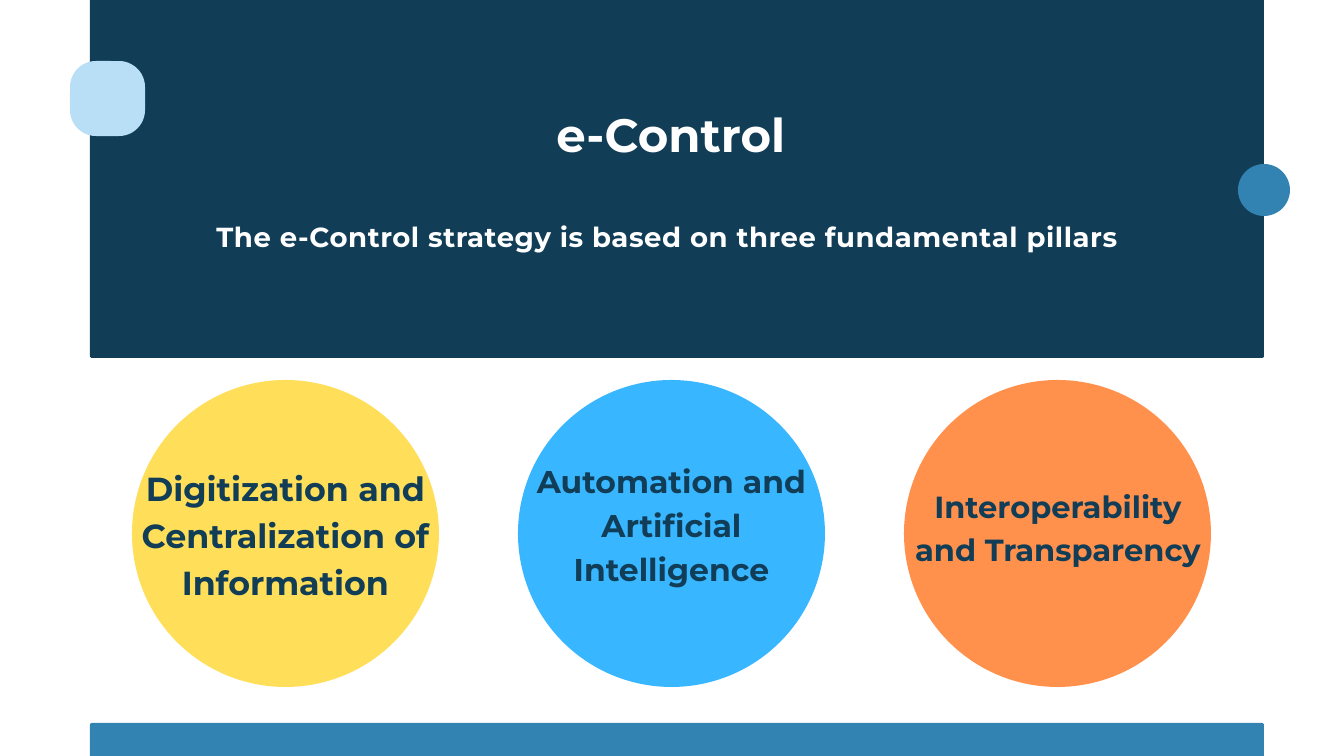
import pptx
import pptx.util
import pptx.dml.color
import pptx.enum.shapes
import pptx.enum.text

NAVY, BLUE, PALE, WHITE = "113D57", "3383B2", "B8DFF6", "FFFFFF"
TITLE = "e-Control"
SUBTITLE = "The e-Control strategy is based on three fundamental pillars"
PILLARS = [
    ("Digitization and Centralization of Information", "FFDE59", 35.7, 50, (123, 462, 325, 137)),
    ("Automation and Artificial Intelligence", "38B6FF", 33.7, 47.1, (509, 456, 325, 129)),
    ("Interoperability and Transparency", "FF914D", 32.7, 45.8, (900, 482, 316, 83)),
]
CIRCLE_LEFT, CIRCLE_TOP, CIRCLE_SIZE, CIRCLE_PITCH = 132, 380, 307, 386
PANEL_LEFT, PANEL_WIDTH, PANEL_RADIUS = 90, 1174, 2
MSO = pptx.enum.shapes.MSO_SHAPE


def px(n):
    return pptx.util.Emu(round(n * 914400 / 67.2))


def rgb(color):
    return pptx.dml.color.RGBColor.from_string(color)


def add_shape(s, kind, box, color, radius=None):
    sp = s.shapes.add_shape(kind, *map(px, box))
    sp.shadow.inherit = False
    sp.fill.solid()
    sp.fill.fore_color.rgb = rgb(color)
    sp.line.fill.background()
    if radius is not None:
        sp.adjustments[0] = radius / min(box[2:])


def set_text(sp, text, *, box, size, leading, color=NAVY, spacing=0):
    sp.left, sp.top, sp.width, sp.height = map(px, box)
    tf = sp.text_frame
    tf.word_wrap = True
    tf.auto_size = pptx.enum.text.MSO_AUTO_SIZE.NONE
    tf.vertical_anchor = pptx.enum.text.MSO_ANCHOR.TOP
    tf.margin_left = tf.margin_right = tf.margin_top = tf.margin_bottom = 0
    p = tf.paragraphs[0]
    p.alignment = pptx.enum.text.PP_ALIGN.CENTER
    p.line_spacing = pptx.util.Pt(leading)
    p.space_before = p.space_after = pptx.util.Pt(0)
    r = p.add_run()
    r.text = text
    r.font.name = "Montserrat"
    r.font.size = pptx.util.Pt(size)
    r.font.bold = True
    r.font.color.rgb = rgb(color)
    if spacing:
        r.font._element.set("spc", str(round(spacing * 100)))


def bring_to_front(sp):
    sp.element.getparent().append(sp.element)


def main():
    prs = pptx.Presentation()
    prs.slide_width, prs.slide_height = px(1344), px(756)
    s = prs.slides.add_slide(prs.slide_layouts[0])
    title, subtitle = s.placeholders

    for top, height, color in [(-86, 444, NAVY), (723, 71, BLUE)]:
        add_shape(s, MSO.ROUNDED_RECTANGLE, (PANEL_LEFT, top, PANEL_WIDTH, height), color, PANEL_RADIUS)

    bring_to_front(title)
    set_text(title, TITLE, box=(509, 114, 324, 50), size=50, leading=51, color=WHITE)
    bring_to_front(subtitle)
    set_text(subtitle, SUBTITLE, box=(109, 208, 1117, 41), size=29.5, leading=47.9, color=WHITE, spacing=0.6)

    add_shape(s, MSO.ROUNDED_RECTANGLE, (70, 61, 75, 75), PALE, 26)
    add_shape(s, MSO.OVAL, (1238, 164, 52, 52), BLUE)

    for i, (text, color, size, leading, box) in enumerate(PILLARS):
        left = CIRCLE_LEFT + i * CIRCLE_PITCH
        add_shape(s, MSO.OVAL, (left, CIRCLE_TOP, CIRCLE_SIZE, CIRCLE_SIZE), color)
        label = s.shapes.add_textbox(*map(px, box))
        set_text(label, text, box=box, size=size, leading=leading)

    prs.save("out.pptx")


if __name__ == "__main__":
    main()
